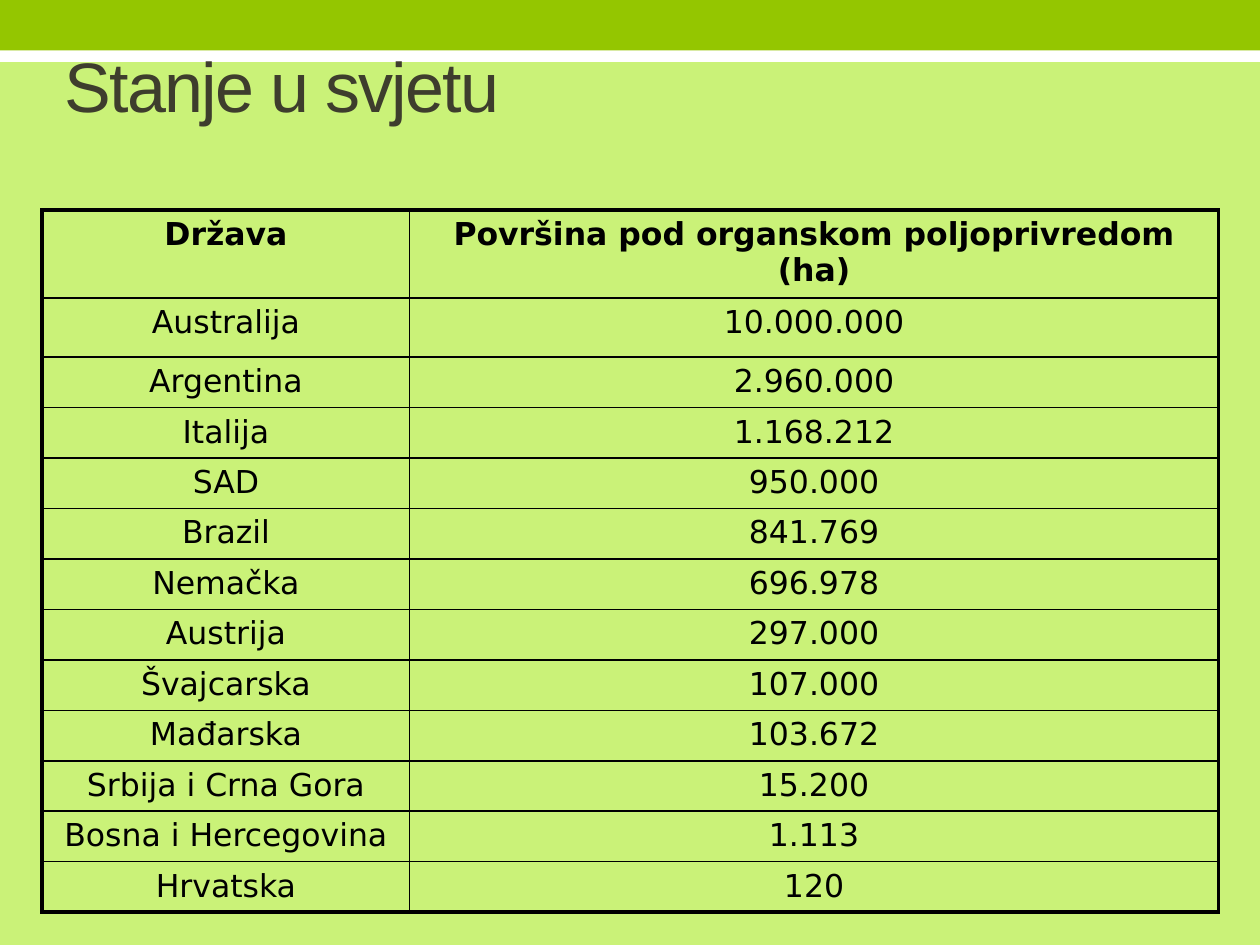
import pptx
import pptx.dml.color
import pptx.enum.shapes
import pptx.enum.text
import pptx.oxml.ns
import pptx.util
from lxml import etree

Cm = pptx.util.Cm
Pt = pptx.util.Pt
RGBColor = pptx.dml.color.RGBColor
PP_ALIGN = pptx.enum.text.PP_ALIGN
MSO_ANCHOR = pptx.enum.text.MSO_ANCHOR
qn = pptx.oxml.ns.qn

PALE_GREEN = RGBColor(0xCA, 0xF2, 0x78)
GREEN = RGBColor(0x94, 0xC6, 0x00)
WHITE = RGBColor(0xFF, 0xFF, 0xFF)
BLACK = RGBColor(0x00, 0x00, 0x00)
OLIVE = RGBColor(0x3E, 0x3D, 0x2D)

THIN, THICK = Pt(1), Pt(2.25)
COLUMN_WIDTHS = [Cm(7.41), Cm(16.3)]
HEADER_HEIGHT, FIRST_HEIGHT, ROW_HEIGHT = Cm(1.78), Cm(1.19), Cm(1.016)

ROWS = [
    ("Država", "Površina pod organskom poljoprivredom (ha)"),
    ("Australija", "10.000.000"),
    ("Argentina", "2.960.000"),
    ("Italija", "1.168.212"),
    ("SAD", "950.000"),
    ("Brazil", "841.769"),
    ("Nemačka", "696.978"),
    ("Austrija", "297.000"),
    ("Švajcarska", "107.000"),
    ("Mađarska", "103.672"),
    ("Srbija i Crna Gora", "15.200"),
    ("Bosna i Hercegovina", "1.113"),
    ("Hrvatska", "120"),
]


def write_text(tf, text, *, font, size, color, bold=False,
               align=PP_ALIGN.LEFT, spacing=None):
    """Write one formatted run; spacing is in points."""
    tf.word_wrap = True
    p = tf.paragraphs[0]
    p.alignment = align
    r = p.add_run()
    r.text = text
    r.font.name = font
    r.font.size = Pt(size)
    r.font.bold = bold
    r.font.color.rgb = color
    if spacing is not None:
        r._r.get_or_add_rPr().set("spc", str(round(spacing * 100)))


def add_band(s, top, height, color):
    """Draw a full-width horizontal band."""
    sp = s.shapes.add_shape(pptx.enum.shapes.MSO_SHAPE.RECTANGLE,
                            0, top, Cm(25.4), height)
    sp.shadow.inherit = False
    sp.fill.solid()
    sp.fill.fore_color.rgb = color
    sp.line.fill.background()


def add_title(s, text):
    sp = s.shapes.add_textbox(Cm(1.06), Cm(0.43), Cm(23.28), Cm(2.54))
    sp.text_frame.vertical_anchor = MSO_ANCHOR.MIDDLE
    write_text(sp.text_frame, text, font="Arial", size=40, color=OLIVE,
               spacing=-1)


def set_borders(cell, widths):
    """Add cell borders, given as widths for left, right, top and bottom."""
    tc_pr = cell._tc.get_or_add_tcPr()
    for side, width in zip("LRTB", widths):
        ln = etree.SubElement(tc_pr, qn(f"a:ln{side}"), w=str(width))
        fill = etree.SubElement(ln, qn("a:solidFill"))
        etree.SubElement(fill, qn("a:srgbClr"), val=str(BLACK))


def add_area_table(s):
    heights = [HEADER_HEIGHT, FIRST_HEIGHT] + [ROW_HEIGHT] * (len(ROWS) - 2)
    table = s.shapes.add_table(
        len(ROWS), len(COLUMN_WIDTHS), Cm(0.85), Cm(4.23),
        sum(COLUMN_WIDTHS), sum(heights)).table
    table.first_row = table.horz_banding = False
    for column, width in zip(table.columns, COLUMN_WIDTHS):
        column.width = width
    last_row, last_col = len(ROWS) - 1, len(COLUMN_WIDTHS) - 1

    for i, values in enumerate(ROWS):
        table.rows[i].height = heights[i]
        for j, value in enumerate(values):
            cell = table.cell(i, j)
            # Thick lines run only along the outside of the table
            outside = (j == 0, j == last_col, i == 0, i == last_row)
            set_borders(cell, [THICK if edge else THIN for edge in outside])
            cell.fill.background()
            write_text(cell.text_frame, value, font="DejaVu Sans", size=18,
                       color=BLACK, bold=i == 0, align=PP_ALIGN.CENTER)


def main():
    prs = pptx.Presentation()
    prs.slide_width, prs.slide_height = Cm(25.4), Cm(19.05)
    s = prs.slides.add_slide(prs.slide_layouts[6])

    # Background and top bands
    s.background.fill.solid()
    s.background.fill.fore_color.rgb = PALE_GREEN
    add_band(s, Cm(0.61), Cm(0.64), WHITE)
    add_band(s, 0, Cm(1.02), GREEN)

    # Content
    add_title(s, "Stanje u svjetu")
    add_area_table(s)

    prs.save("out.pptx")


if __name__ == "__main__":
    main()
